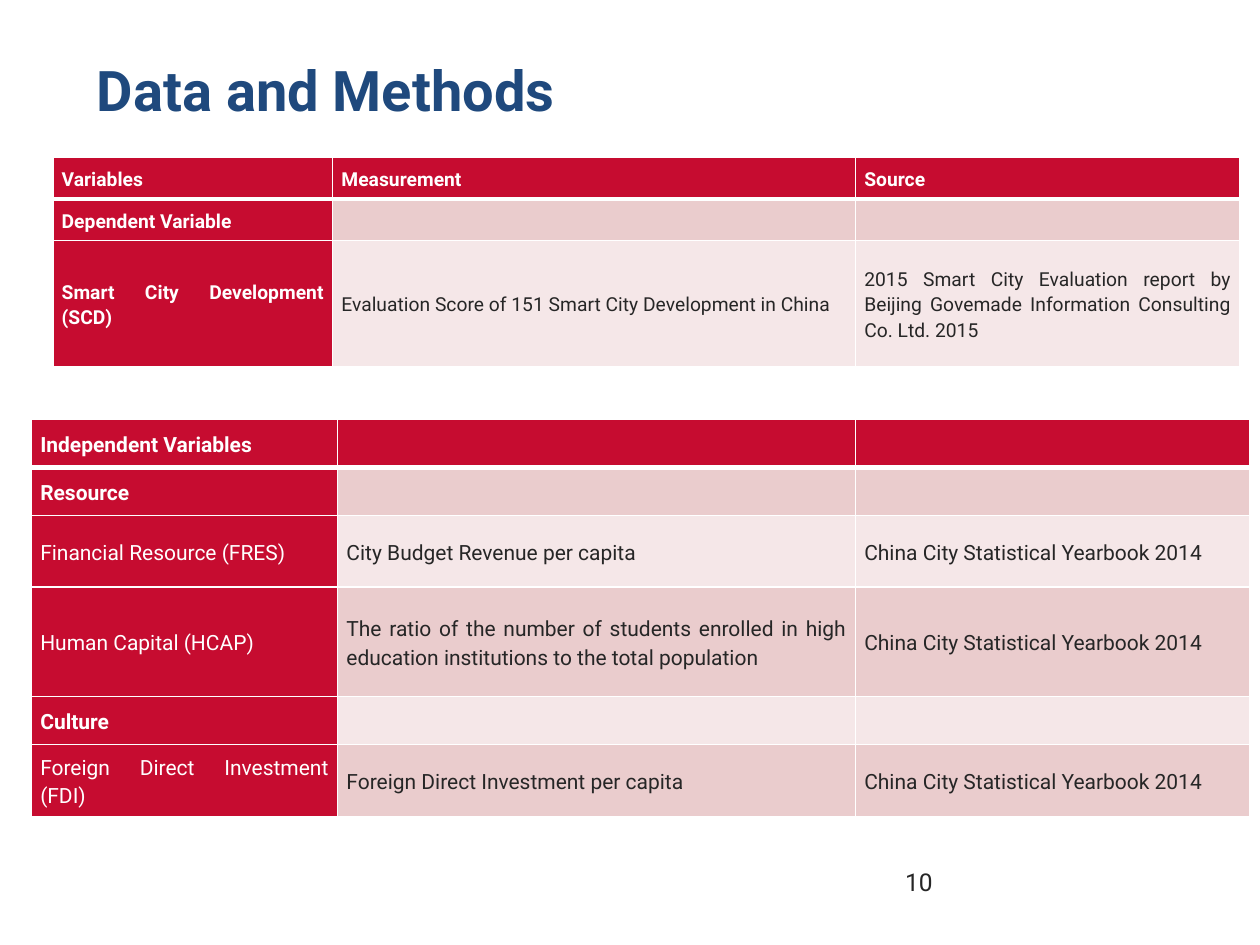
from lxml.etree import SubElement
from pptx import Presentation
from pptx.dml.color import RGBColor
from pptx.enum.text import MSO_ANCHOR, PP_ALIGN
from pptx.oxml.ns import qn
from pptx.util import Inches, Pt

COLORS = {
    "title": "1F497D",
    "text": "262626",
    "white": "FFFFFF",
    "red": "C60C30",
    "dark_band": "EACCCD",
    "light_band": "F5E7E8",
}
CELL_FORMAT = {
    "margin_left": Inches(0.07),
    "margin_right": Inches(0.07),
    "margin_top": 0,
    "margin_bottom": 0,
    "vertical_anchor": MSO_ANCHOR.MIDDLE,
}
YEARBOOK = "China City Statistical Yearbook 2014"
DEPENDENT = [
    ["Variables", "Measurement", "Source"],
    ["Dependent Variable", "", ""],
    ["Smart City Development (SCD)",
     "Evaluation Score of 151 Smart City Development in China",
     "2015 Smart City Evaluation report by Beijing Govemade Information "
     "Consulting Co. Ltd. 2015"],
]
INDEPENDENT = [
    ["Independent Variables", "", ""],
    ["Resource", "", ""],
    ["Financial Resource (FRES)", "City Budget Revenue per capita", YEARBOOK],
    ["Human Capital (HCAP)",
     "The ratio of the number of students enrolled in high education "
     "institutions to the total population", YEARBOOK],
    ["Culture", "", ""],
    ["Foreign Direct Investment (FDI)",
     "Foreign Direct Investment per capita", YEARBOOK],
]


def rgb(name):
    return RGBColor.from_string(COLORS[name])


def set_format(obj, values):
    for name, value in values.items():
        setattr(obj, name, value)


def write(p, text, size, color, bold=False):
    r = p.add_run()
    r.text = text
    set_format(r.font, {"name": "Roboto", "size": Pt(size), "bold": bold})
    r.font.color.rgb = rgb(color)


def add_text(s, box, text, size, color, bold=False,
             align=PP_ALIGN.LEFT, anchor=MSO_ANCHOR.TOP):
    tf = s.shapes.add_textbox(*map(Inches, box)).text_frame
    set_format(tf, {"word_wrap": True, "vertical_anchor": anchor})
    p = tf.paragraphs[0]
    p.alignment = align
    write(p, text, size, color, bold)


def set_borders(cell, top, bottom):
    tc_pr = cell._tc.get_or_add_tcPr()
    widths = {"a:lnL": 1, "a:lnR": 1, "a:lnT": top, "a:lnB": bottom}
    for tag, width in widths.items():
        ln = SubElement(tc_pr, qn(tag), w=str(Pt(width)))
        fill = SubElement(ln, qn("a:solidFill"))
        SubElement(fill, qn("a:srgbClr"), val=COLORS["white"])


def add_variables(s, box, widths, heights, rows, size, bold_rows):
    frame = s.shapes.add_table(len(rows), len(widths), *map(Inches, box))
    table = frame.table
    set_format(table, {"first_row": False, "horz_banding": False})
    for column, width in zip(table.columns, widths):
        column.width = Inches(width)
    for i, (row, height) in enumerate(zip(rows, heights)):
        table.rows[i].height = Inches(height)
        band = "dark_band" if i % 2 else "light_band"
        for j, text in enumerate(row):
            cell = table.cell(i, j)
            is_head = i == 0 or j == 0
            set_format(cell, CELL_FORMAT)
            set_borders(cell, 3 if i == 1 else 1, 3 if i == 0 else 1)
            cell.fill.solid()
            cell.fill.fore_color.rgb = rgb("red" if is_head else band)
            if text:
                p = cell.text_frame.paragraphs[0]
                set_format(p, {"alignment": PP_ALIGN.JUSTIFY,
                               "line_spacing": 1.15})
                write(p, text, size, "white" if is_head else "text",
                      is_head and i in bold_rows)


def main():
    prs = Presentation()
    set_format(prs, {"slide_width": Inches(10), "slide_height": Inches(7.5)})
    s = prs.slides.add_slide(prs.slide_layouts[6])
    add_text(s, (0.67, 0.25, 8.5, 0.92), "Data and Methods", 32, "title",
             bold=True, anchor=MSO_ANCHOR.MIDDLE)
    add_text(s, (6.58, 6.83, 0.92, 0.5), "10", 14, "text",
             align=PP_ALIGN.RIGHT)
    add_variables(s, (0.42, 1.25, 9.42, 1.67), (2.22, 4.15, 3.05),
                  (0.33, 0.33, 1), DEPENDENT, 11, (0, 1, 2))
    add_variables(s, (0.25, 3.33, 9.67, 3.17), (2.43, 4.11, 3.13),
                  (0.38, 0.38, 0.57, 0.87, 0.38, 0.57), INDEPENDENT, 12,
                  (0, 1, 4))
    prs.save("out.pptx")


if __name__ == "__main__":
    main()
